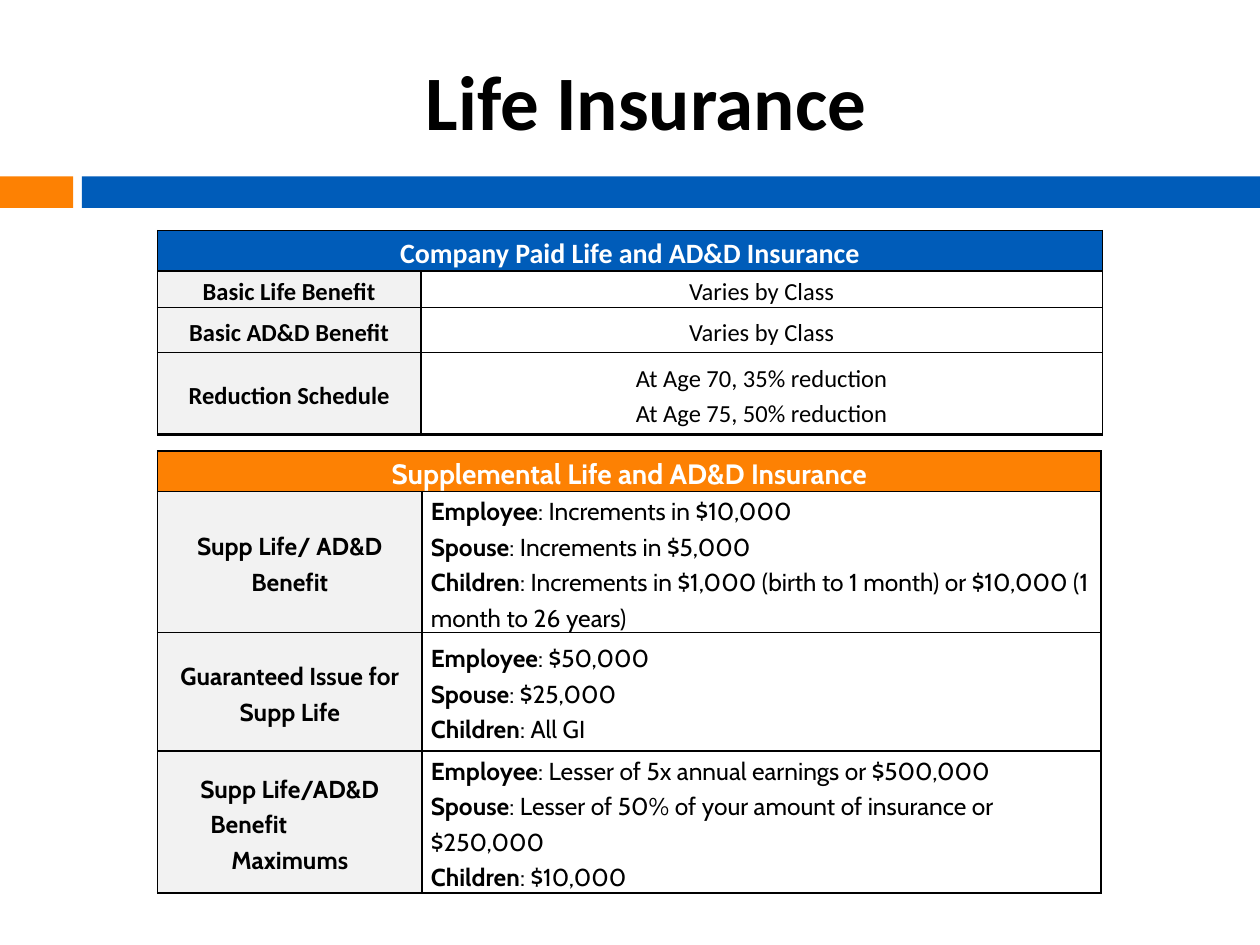
from dataclasses import dataclass

from lxml.etree import SubElement
from pptx import Presentation
from pptx.dml.color import RGBColor
from pptx.enum.shapes import MSO_SHAPE
from pptx.enum.text import MSO_ANCHOR, PP_ALIGN
from pptx.oxml.ns import qn
from pptx.util import Inches, Pt


@dataclass(frozen=True)
class Theme:
    blue: str = "005CB9"
    orange: str = "FD8103"
    label_fill: str = "F2F2F2"
    white: str = "FFFFFF"
    black: str = "000000"
    title_size: int = 44
    header_size: int = 16
    body_size: int = 14
    thin_line: float = 1
    thick_line: float = 1.5
    line_spacing: float = 1.19
    main_font: str = "Calibri"
    supplemental_font: str = "Cabin"


THEME = Theme()


@dataclass
class Line:
    """One paragraph: runs of (text, bold), with its layout."""
    runs: list
    align: PP_ALIGN = PP_ALIGN.CENTER
    before: float = 0
    after: float = 0
    indent: float = 0


def label(text):
    return [Line([(text, True)], before=4, after=6)]


def plain(text):
    return [Line([(text, False)], before=4, after=6)]


def coverage(employee, spouse, children):
    """Left-aligned lines, each with a bold name and its amount."""
    amounts = {"Employee": employee, "Spouse": spouse, "Children": children}
    return [Line([(name, True), (f": {amount}", False)], align=PP_ALIGN.LEFT)
            for name, amount in amounts.items()]


def add_run(paragraph, text, font, size, color, bold):
    run = paragraph.add_run()
    run.text = text
    run.font.name = font
    run.font.size = Pt(size)
    run.font.bold = bold
    run.font.color.rgb = RGBColor.from_string(color)


def add_bar(slide, left, width, color):
    bar = slide.shapes.add_shape(MSO_SHAPE.RECTANGLE, Inches(left), Inches(1.4),
                                 Inches(width), Inches(0.25))
    bar.shadow.inherit = False
    bar.fill.solid()
    bar.fill.fore_color.rgb = RGBColor.from_string(color)
    bar.line.fill.background()


def add_title(slide, text):
    box = slide.shapes.add_textbox(Inches(0.67), Inches(0.25), Inches(8.92), Inches(1.08))
    frame = box.text_frame
    frame.word_wrap = True
    frame.vertical_anchor = MSO_ANCHOR.MIDDLE
    paragraph = frame.paragraphs[0]
    paragraph.alignment = PP_ALIGN.CENTER
    add_run(paragraph, text, THEME.main_font, THEME.title_size, THEME.black, True)


def set_borders(cell, top, bottom):
    properties = cell._tc.get_or_add_tcPr()
    widths = {"L": THEME.thin_line, "R": THEME.thin_line, "T": top, "B": bottom}
    for side, width in widths.items():
        border = SubElement(properties, qn(f"a:ln{side}"), w=str(Pt(width)))
        fill = SubElement(border, qn("a:solidFill"))
        SubElement(fill, qn("a:srgbClr"), val=THEME.black)


def style_cell(cell, fill, top, bottom):
    set_borders(cell, top, bottom)
    cell.fill.solid()
    cell.fill.fore_color.rgb = RGBColor.from_string(fill)
    cell.vertical_anchor = MSO_ANCHOR.MIDDLE
    cell.margin_left = cell.margin_right = Inches(0.07)
    cell.margin_top = cell.margin_bottom = 0


def write_cell(cell, lines, font, size, color):
    frame = cell.text_frame
    for index, line in enumerate(lines):
        paragraph = frame.add_paragraph() if index else frame.paragraphs[0]
        paragraph.alignment = line.align
        paragraph.line_spacing = THEME.line_spacing
        paragraph.space_before = Pt(line.before)
        paragraph.space_after = Pt(line.after)
        if line.indent:
            paragraph._p.get_or_add_pPr().set("marL", str(Inches(line.indent)))
        for text, bold in line.runs:
            for part_index, part in enumerate(text.split("\n")):
                if part_index:
                    paragraph.add_line_break()
                add_run(paragraph, part, font, size, color, bold)


def add_benefit_table(slide, top, columns, heights, header, header_fill, font, rows, thick_after):
    """Add a table with a merged header; thick_after holds rows with a thick lower edge."""
    table = slide.shapes.add_table(len(heights), len(columns), Inches(1.25), Inches(top),
                                   Inches(sum(columns)), Inches(sum(heights))).table
    table.first_row = table.horz_banding = False
    for column, width in zip(table.columns, columns):
        column.width = Inches(width)
    for row_index, (row, height) in enumerate(zip(table.rows, heights)):
        row.height = Inches(height)
        fills = (THEME.label_fill, THEME.white) if row_index else (header_fill, header_fill)
        upper, lower = (THEME.thick_line if edge in thick_after else THEME.thin_line
                        for edge in (row_index - 1, row_index))
        for cell, fill in zip(row.cells, fills):
            style_cell(cell, fill, upper, lower)
    table.cell(0, 0).merge(table.cell(0, 1))
    write_cell(table.cell(0, 0), [Line([(header, True)])], font, THEME.header_size, THEME.white)
    for row_index, contents in enumerate(rows, start=1):
        for column_index, lines in enumerate(contents):
            write_cell(table.cell(row_index, column_index), lines, font,
                       THEME.body_size, THEME.black)


def main():
    presentation = Presentation()
    presentation.slide_width = Inches(10)
    presentation.slide_height = Inches(7.5)
    slide = presentation.slides.add_slide(presentation.slide_layouts[6])

    add_bar(slide, 0, 0.58, THEME.orange)
    add_bar(slide, 0.65, 9.35, THEME.blue)
    add_title(slide, "Life Insurance")

    add_benefit_table(
        slide, 1.83, [2.09, 5.41], [0.32, 0.29, 0.36, 0.65],
        "Company Paid Life and AD&D Insurance", THEME.blue, THEME.main_font,
        [
            (label("Basic Life Benefit"), plain("Varies by Class")),
            (label("Basic AD&D Benefit"), plain("Varies by Class")),
            (label("Reduction Schedule"),
             [Line([("At Age 70, 35% reduction\nAt Age 75, 50% reduction", False)], after=14)]),
        ],
        thick_after={3})

    maximums_label = [
        Line([("Supp Life/AD&D", True)], before=4),
        Line([("Benefit", True)], align=PP_ALIGN.LEFT, indent=0.35),
        Line([("Maximums", True)], after=6),
    ]
    add_benefit_table(
        slide, 3.58, [2.1, 5.39], [0.32, 1.12, 0.94, 1.13],
        "Supplemental Life and AD&D Insurance", THEME.orange, THEME.supplemental_font,
        [
            (label("Supp Life/ AD&D Benefit"),
             coverage("Increments in $10,000", "Increments in $5,000",
                      "Increments in $1,000 (birth to 1 month) or $10,000 (1 month to 26 years)")),
            (label("Guaranteed Issue for Supp Life"), coverage("$50,000", "$25,000", "All GI")),
            (maximums_label,
             coverage("Lesser of 5x annual earnings or $500,000",
                      "Lesser of 50% of your amount of insurance or $250,000", "$10,000")),
        ],
        thick_after={2, 3})

    presentation.save("out.pptx")


if __name__ == "__main__":
    main()
